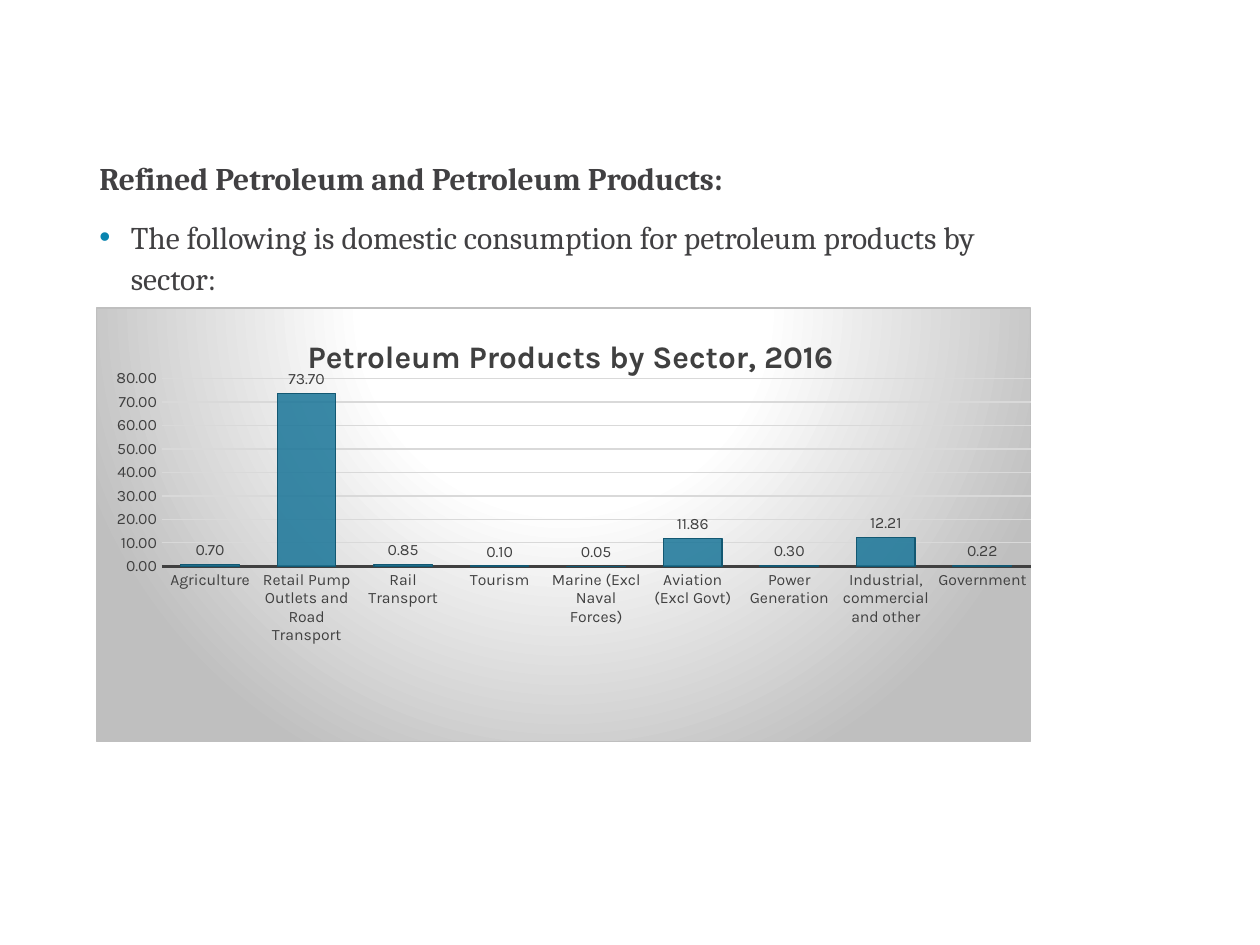
from lxml import etree
from pptx import Presentation
from pptx import util as u
from pptx.chart.data import CategoryChartData
from pptx.dml.color import RGBColor
from pptx.enum import chart as charts
from pptx.oxml import parse_xml
from pptx.oxml.ns import nsdecls, qn

INK = RGBColor(0x41, 0x40, 0x42)
BULLET = RGBColor(0x09, 0x84, 0xAF)
LABEL = RGBColor(0x40, 0x40, 0x40)
GRID = RGBColor(0xD9, 0xD9, 0xD9)
BORDER = RGBColor(0xBF, 0xBF, 0xBF)
WHITE = RGBColor(0xFF, 0xFF, 0xFF)
BAR = RGBColor(0x19, 0x75, 0x98)
BAR_EDGE = RGBColor(0x13, 0x58, 0x72)

HEADING = "Refined Petroleum and Petroleum Products:"
POINT = "The following is domestic consumption for petroleum products by sector:"
CHART_TITLE = "Petroleum Products by Sector, 2016"
SECTORS = [
    ("Agriculture", 0.70),
    ("Retail Pump Outlets and Road Transport", 73.70),
    ("Rail Transport", 0.85),
    ("Tourism", 0.10),
    ("Marine (Excl Naval Forces)", 0.05),
    ("Aviation (Excl Govt)", 11.86),
    ("Power Generation", 0.30),
    ("Industrial, commercial and other", 12.21),
    ("Government", 0.22),
]
BACKDROP = [(0, WHITE), (39, WHITE), (100, BORDER)]
BODY_FONT = {"name": "Cambria", "size": u.Pt(18)}
SMALL_FONT = {"name": "Karla", "size": u.Pt(9), "bold": False}
TITLE_FONT = {"name": "Karla", "size": u.Pt(18), "bold": True}


def style(font, values, color):
    for key, value in values.items():
        setattr(font, key, value)
    font.color.rgb = color


def set_line(line, color, width):
    line.color.rgb = color
    line.width = u.Pt(width)


def add_bullet(para):
    props = para._p.get_or_add_pPr()
    props.set("marL", str(u.Inches(0.25)))
    props.set("indent", str(-u.Inches(0.25)))
    color = etree.SubElement(props, qn("a:buClr"))
    etree.SubElement(color, qn("a:srgbClr"), val=str(BULLET))
    etree.SubElement(props, qn("a:buFont"), typeface="Arial")
    etree.SubElement(props, qn("a:buChar"), char="•")


def place(parent, index, target=None, **extent):
    for old in parent.findall(qn("c:layout")):
        parent.remove(old)
    layout = etree.Element(qn("c:layout"))
    manual = etree.SubElement(layout, qn("c:manualLayout"))
    if target:
        etree.SubElement(manual, qn("c:layoutTarget"), val=target)
    for side in ("xMode", "yMode"):
        etree.SubElement(manual, qn("c:" + side), val="edge")
    for key, value in extent.items():
        etree.SubElement(manual, qn("c:" + key), val=str(value))
    parent.insert(index, layout)


def add_backdrop(chart):
    stops = "".join(
        f'<a:gs pos="{pos * 1000}"><a:srgbClr val="{color}"/></a:gs>'
        for pos, color in BACKDROP
    )
    props = parse_xml(
        f'<c:spPr {nsdecls("c", "a")}><a:gradFill><a:gsLst>{stops}</a:gsLst>'
        '<a:path path="circle"><a:fillToRect l="50000" t="-80000" r="50000" b="180000"/>'
        f'</a:path></a:gradFill><a:ln w="{u.Pt(0.75)}"><a:solidFill>'
        f'<a:srgbClr val="{BORDER}"/></a:solidFill></a:ln></c:spPr>'
    )
    chart._chartSpace.find(qn("c:chart")).addnext(props)


def add_text(page):
    box = page.shapes.add_textbox(
        u.Inches(0.69), u.Inches(1.18), u.Inches(7.5), u.Inches(1.25)
    )
    frame = box.text_frame
    frame.word_wrap = True
    heading, point = frame.paragraphs[0], frame.add_paragraph()
    add_bullet(point)
    point.space_before = u.Pt(10)
    for para, words, bold in ((heading, HEADING, True), (point, POINT, False)):
        para.line_spacing = 1.1
        span = para.add_run()
        span.text = words
        style(span.font, {**BODY_FONT, "bold": bold}, INK)


def add_sector_chart(page):
    data = CategoryChartData(number_format="0.00")
    data.categories = [name for name, _ in SECTORS]
    data.add_series("Series 1", [value for _, value in SECTORS])
    chart = page.shapes.add_chart(
        charts.XL_CHART_TYPE.COLUMN_CLUSTERED,
        u.Inches(0.76), u.Inches(2.44), u.Inches(7.43), u.Inches(3.45), data,
    ).chart
    style(chart.font, {**SMALL_FONT, "size": u.Pt(10)}, RGBColor(0, 0, 0))
    add_backdrop(chart)
    chart.has_legend = False

    title = chart.chart_title
    title.text_frame.text = CHART_TITLE
    style(title.text_frame.paragraphs[0].runs[0].font, TITLE_FONT, LABEL)
    place(title._element, 1, x=0.22, y=0.05)
    place(chart._chartSpace.chart.plotArea, 0, "inner", x=0.07, y=0.163, w=0.93, h=0.433)

    for axis in (chart.category_axis, chart.value_axis):
        axis.major_tick_mark = axis.minor_tick_mark = charts.XL_TICK_MARK.NONE
        style(axis.tick_labels.font, SMALL_FONT, LABEL)
    set_line(chart.category_axis.format.line, LABEL, 1.5)
    values = chart.value_axis
    values.minimum_scale, values.maximum_scale, values.major_unit = 0, 80, 10
    values.format.line.fill.background()
    set_line(values.major_gridlines.format.line, GRID, 0.75)

    plot = chart.plots[0]
    plot.gap_width = 65
    plot.vary_by_categories = False
    series = plot.series[0]
    series.format.fill.solid()
    series.format.fill.fore_color.rgb = BAR
    color = series._element.spPr.find(qn("a:solidFill")).find(qn("a:srgbClr"))
    etree.SubElement(color, qn("a:alpha"), val="85000")
    set_line(series.format.line, BAR_EDGE, 0.75)

    labels = series.data_labels
    labels.show_value = True
    labels.position = charts.XL_LABEL_POSITION.OUTSIDE_END
    style(labels.font, SMALL_FONT, LABEL)
    for numbers in (labels, values.tick_labels):
        numbers.number_format = "0.00"
        numbers.number_format_is_linked = False


def main():
    deck = Presentation()
    deck.slide_width, deck.slide_height = u.Inches(10), u.Inches(7.5)
    page = deck.slides.add_slide(deck.slide_layouts[6])
    add_text(page)
    add_sector_chart(page)
    deck.save("out.pptx")


if __name__ == "__main__":
    main()
